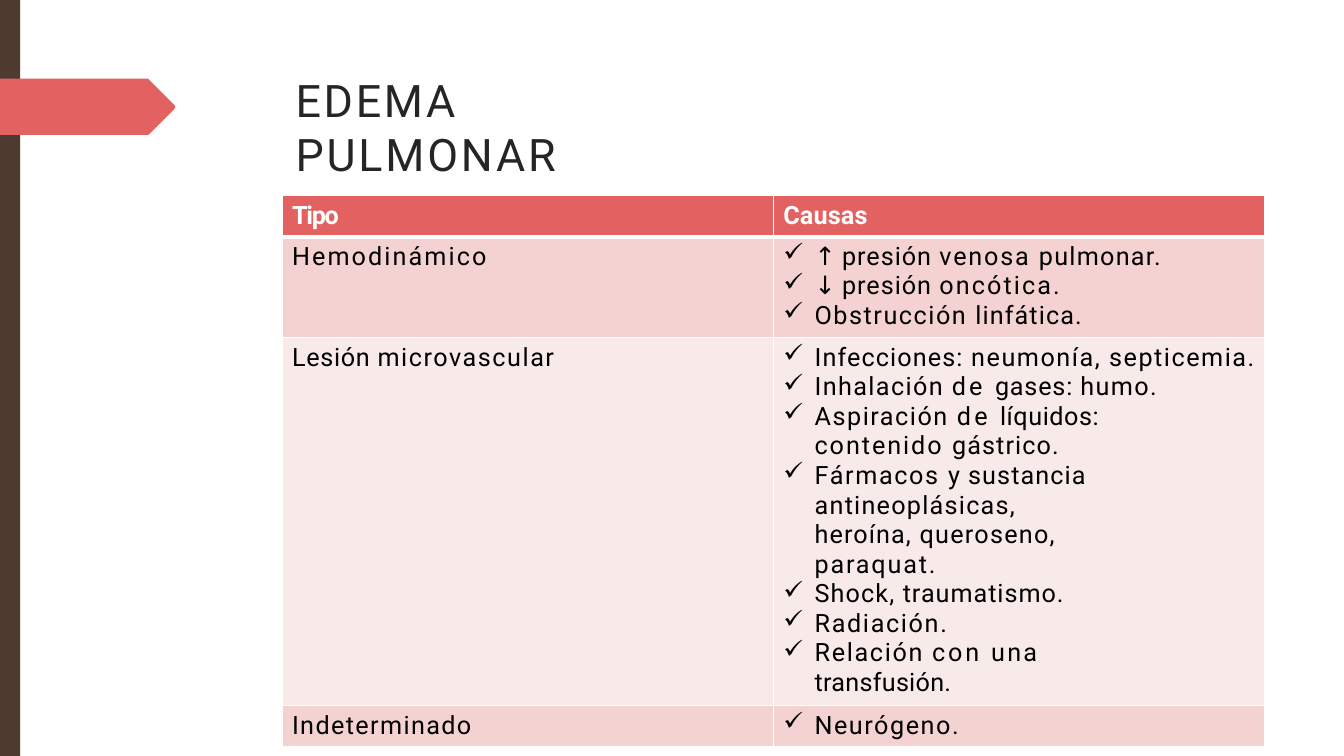
"""Build the slide on the types and causes of pulmonary edema."""
from dataclasses import dataclass
from typing import Any, NamedTuple

from lxml import etree
from pptx import Presentation
from pptx import util as u
from pptx.dml.color import RGBColor
from pptx.enum import shapes, text
from pptx.oxml import ns

HUES = {"bark": "4E3A2F", "coral": "E26262", "rose": "F4D2D2", "blush": "F9EAEA",
        "ink": "252525", "black": "000000", "white": "FFFFFF"}
CELL = {"margin_left": 0, "margin_right": 0, "margin_top": u.Cm(0.13), "margin_bottom": 0}
FRAME = {"margin_left": 0, "margin_right": 0, "margin_top": u.Cm(0.03), "margin_bottom": 0,
         "word_wrap": True, "vertical_anchor": text.MSO_ANCHOR.TOP,
         "auto_size": text.MSO_AUTO_SIZE.SHAPE_TO_FIT_TEXT}
PARA = {"alignment": text.PP_ALIGN.LEFT, "space_before": u.Pt(0)}
HEAD = {"name": "Roboto", "size": u.Pt(32), "bold": False}
BOLD = {"name": "Roboto", "size": u.Pt(18), "bold": True}
BODY = {**BOLD, "bold": False}


class Bit(NamedTuple):
    """A stretch of text and its letter spacing in points."""
    words: str
    gap: float


@dataclass
class Item:
    """One paragraph with its right margin in centimetres."""
    bits: list[Bit]
    right: float = 0


@dataclass
class Row:
    """One table row: height, fill, text style and both cells."""
    tall: float
    fill: str
    hue: str
    font: dict[str, Any]
    kind: list[Bit]
    causes: list[Item]
    ticks: bool = True


ROWS = [
    Row(1.04, "coral", "white", BOLD, [Bit("Tipo", -0.9)], [Item([Bit("Causas", 0.1)])], False),
    Row(2.54, "rose", "black", BODY, [Bit("Hemodinámico", 1.5)], [
        Item([Bit("↑ ", 0), Bit("presión ", 0.7), Bit("venosa ", 1.3), Bit("pulmonar.", 0.9)]),
        Item([Bit("↓ ", 0), Bit("presión ", 0.7), Bit("oncótica.", 1.5)]),
        Item([Bit("Obstrucción ", 1.1), Bit("linfática.", 0.8)])]),
    Row(7.87, "blush", "black", BODY, [Bit("Lesión ", 0.5), Bit("microvascular", 1.1)], [
        Item([Bit("Infecciones: ", 0.8), Bit("neumonía, septicemia.", 1.1)]),
        Item([Bit("Inhalación ", 1), Bit("de ", 2.2), Bit("gases: ", 0.6), Bit("humo.", 1)]),
        Item([Bit("Aspiración ", 1.1), Bit("de ", 2.2), Bit("líquidos: ", 0.4),
              Bit("contenido ", 1.4), Bit("gástrico.", 0.8)], 3.81),
        Item([Bit("Fármacos ", 1.2), Bit("y ", 0.7), Bit("sustancia ", 0.8),
              Bit("antineoplásicas, ", 0.9), Bit("heroína, ", 0.8),
              Bit("queroseno, ", 0.9), Bit("paraquat.", 1.3)], 3.81),
        Item([Bit("Shock, ", 0.8), Bit("traumatismo.", 0.7)]),
        Item([Bit("Radiación.", 1.2)]),
        Item([Bit("Relación ", 1.2), Bit("con ", 2), Bit("una ", 1.6),
              Bit("transfusión.", 0.2)], 3.81)]),
    Row(1.04, "rose", "black", BODY, [Bit("Indeterminado", 1)], [Item([Bit("Neurógeno.", 1.1)])]),
]


def apply(thing: Any, form: dict[str, Any]) -> None:
    """Set each format value on the object."""
    for name, value in form.items():
        setattr(thing, name, value)


def add(base: Any, tag: str, **attrs: str) -> Any:
    """Append a drawing element."""
    return etree.SubElement(base, ns.qn(tag), attrs)


def paint(thing: Any, hue: str) -> None:
    """Fill an object with a named colour."""
    thing.fill.solid()
    thing.fill.fore_color.rgb = RGBColor.from_string(HUES[hue])


def plain(shape: Any, hue: str) -> None:
    """Give a shape a flat fill with no line or shadow."""
    paint(shape, hue)
    shape.line.fill.background()
    shape.shadow.inherit = False


def write(frame: Any, items: list[Item], font: dict[str, Any], hue: str,
          left: float, tick: bool = False) -> None:
    """Write paragraphs of spaced runs, with check marks if asked."""
    for num, item in enumerate(items):
        para = frame.add_paragraph() if num else frame.paragraphs[0]
        props = para._p.get_or_add_pPr()
        props.set("marL", str(u.Cm(left)))
        props.set("indent", str(u.Cm(-0.79 if tick else 0)))
        if item.right:
            props.set("marR", str(u.Cm(item.right)))
        if tick:
            add(props, "a:buChar", char="✓")
            tabs = add(props, "a:tabLst")
            add(tabs, "a:tab", pos=str(u.Cm(left)), algn="l")
        apply(para, PARA)
        for bit in item.bits:
            run = para.add_run()
            run.text = bit.words
            apply(run.font, font)
            run.font.color.rgb = RGBColor.from_string(HUES[hue])
            run._r.get_or_add_rPr().set("spc", str(round(bit.gap * 100)))


def edge(cell: Any, top: float, low: float) -> None:
    """Draw white borders around a cell."""
    props = cell._tc.get_or_add_tcPr()
    for side, wide in (("L", 1), ("R", 1), ("T", top), ("B", low)):
        line = add(props, f"a:ln{side}", w=str(u.Pt(wide)))
        add(add(line, "a:solidFill"), "a:srgbClr", val=HUES["white"])


def decor(slide: Any) -> None:
    """Draw the side strip and the pointer."""
    strip = slide.shapes.add_shape(shapes.MSO_SHAPE.RECTANGLE, 0, 0, u.Cm(0.51), u.Cm(19.05))
    plain(strip, "bark")
    pen = slide.shapes.build_freeform(0, 198, scale=u.Cm(0.01))
    pen.add_line_segments([(373, 198), (376, 201), (440, 265), (442, 269), (440, 274),
                           (376, 338), (373, 340), (0, 340)])
    plain(pen.convert_to_shape(), "coral")


def head(slide: Any) -> None:
    """Place and write the title."""
    title = slide.shapes.title
    apply(title, {"left": u.Cm(7.42), "top": u.Cm(1.8),
                  "width": u.Cm(10.62), "height": u.Cm(1.42)})
    apply(title.text_frame, FRAME)
    write(title.text_frame, [Item([Bit("EDEMA ", 1.9), Bit("PULMONAR", 2)])], HEAD, "ink", 0.03)


def grid(slide: Any) -> None:
    """Build the table of types and causes."""
    table = slide.shapes.add_table(len(ROWS), 2, u.Cm(7.11), u.Cm(4.93), u.Cm(24.76),
                                   u.Cm(sum(row.tall for row in ROWS))).table
    for num, row in enumerate(ROWS):
        table.rows[num].height = u.Cm(row.tall)
        for col, items in enumerate(([Item(row.kind)], row.causes)):
            cell = table.cell(num, col)
            tick = row.ticks and col == 1
            apply(cell, CELL)
            edge(cell, 3 if num == 1 else 1, 3 if num == 0 else 1)
            paint(cell, row.fill)
            write(cell.text_frame, items, row.font, row.hue, 1.04 if tick else 0.25, tick)


def main() -> None:
    """Build and save the deck."""
    deck = Presentation()
    apply(deck, {"slide_width": u.Cm(33.87), "slide_height": u.Cm(19.05)})
    slide = deck.slides.add_slide(deck.slide_layouts[5])
    decor(slide)
    head(slide)
    grid(slide)
    deck.save("out.pptx")


if __name__ == "__main__":
    main()
